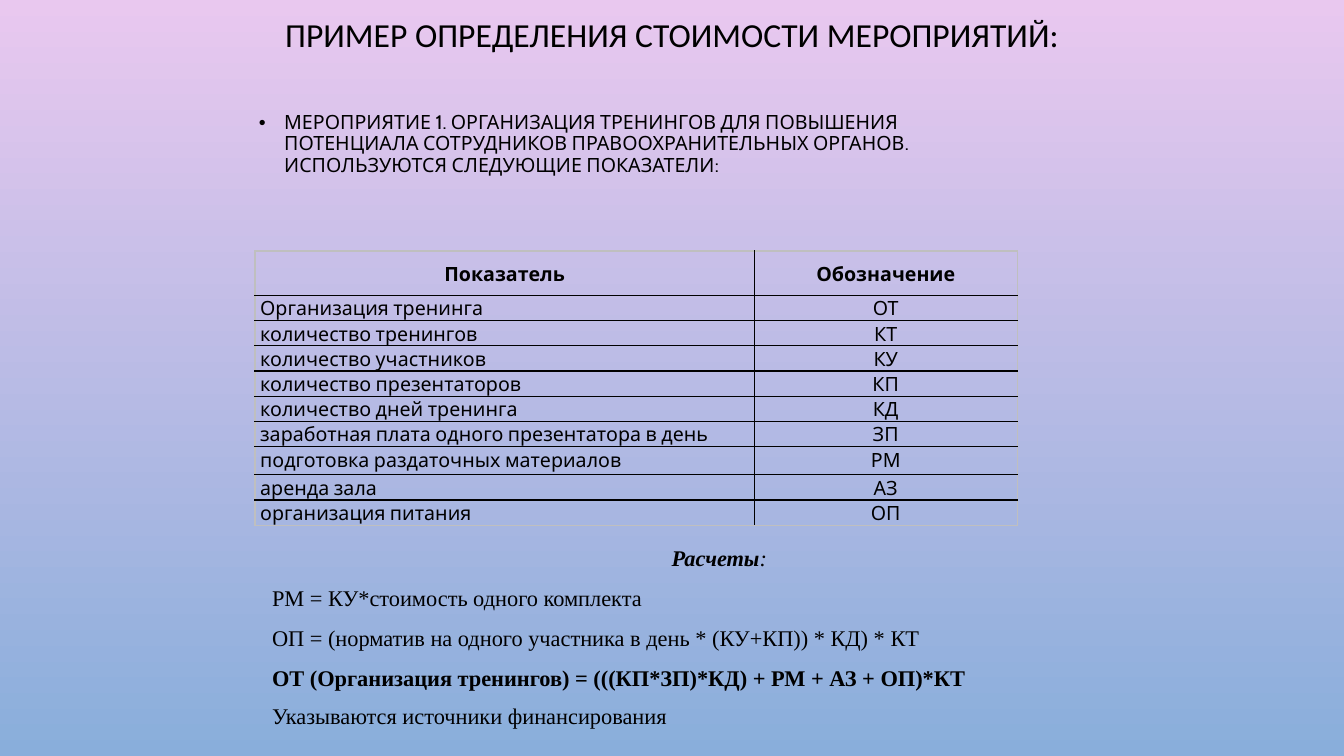
from dataclasses import dataclass
from typing import NamedTuple

from lxml.etree import SubElement as Sub
from pptx import Presentation as Deck
from pptx.dml.color import RGBColor as RGB
from pptx.enum.text import MSO_ANCHOR as Anchor, PP_ALIGN as Align
from pptx.oxml.ns import qn
from pptx.util import Inches, Pt


@dataclass(frozen=True)
class Theme:
    ink: str = "000000"
    edge: str = "BFBFBF"
    top: str = "E9C8EF"
    base: str = "89AEDB"
    head: str = "Calibri"
    body: str = "Cabin"
    calc: str = "Times New Roman"
    head_size: int = 24
    body_size: int = 14
    calc_size: int = 16


class Box(NamedTuple):
    left: float
    top: float
    width: float
    height: float


class Item(NamedTuple):
    name: str
    code: str
    height: float = 0.25


class Line(NamedTuple):
    text: str
    bold: bool = False
    align: Align = Align.JUSTIFY
    gap: float = 1.07


THEME = Theme()

ITEMS = [
    Item("Показатель", "Обозначение", 0.44),
    Item("Организация тренинга", "ОТ"),
    Item("количество тренингов", "КТ"),
    Item("количество участников", "КУ"),
    Item("количество презентаторов", "КП"),
    Item("количество дней тренинга", "КД"),
    Item("заработная плата одного презентатора в день", "ЗП"),
    Item("подготовка раздаточных материалов", "РМ", 0.28),
    Item("аренда зала", "АЗ"),
    Item("организация питания", "ОП"),
]

LINES = [
    Line("РМ = КУ*стоимость одного комплекта"),
    Line("ОП = (норматив на одного участника в день * (КУ+КП)) * КД) * КТ"),
    Line("ОТ (Организация тренингов) = (((КП*ЗП)*КД) + РМ + АЗ + ОП)*КТ", True),
    Line("Указываются источники финансирования", align=Align.LEFT, gap=1.0),
]


def style(par, face: str, size: int, bold: bool = False) -> None:
    font = par.font
    font.name, font.size, font.bold = face, Pt(size), bold
    font.color.rgb = RGB.from_string(THEME.ink)


def space(par, align: Align, gap: float, after: float = 0) -> None:
    par.alignment, par.line_spacing, par.space_after = align, gap, Pt(after)


def add_box(slide, box: Box):
    frame = slide.shapes.add_textbox(*map(Inches, box)).text_frame
    frame.word_wrap = True
    return frame


def add_title(slide) -> None:
    frame = add_box(slide, Box(2.2, 0.25, 8.93, 0.6))
    frame.vertical_anchor = Anchor.MIDDLE
    frame.margin_top, frame.margin_bottom = 0, Inches(0.38)
    par = frame.paragraphs[0]
    par.text = "ПРИМЕР ОПРЕДЕЛЕНИЯ СТОИМОСТИ МЕРОПРИЯТИЙ:"
    space(par, Align.CENTER, 0.9)
    style(par, THEME.head, THEME.head_size)


def add_intro(slide) -> None:
    frame = add_box(slide, Box(2.47, 1.07, 7.88, 1.13))
    frame.margin_right = Inches(0.3)
    par = frame.paragraphs[0]
    par.text = ("МЕРОПРИЯТИЕ 1. ОРГАНИЗАЦИЯ ТРЕНИНГОВ ДЛЯ ПОВЫШЕНИЯ ПОТЕНЦИАЛА "
                "СОТРУДНИКОВ ПРАВООХРАНИТЕЛЬНЫХ ОРГАНОВ. "
                "ИСПОЛЬЗУЮТСЯ СЛЕДУЮЩИЕ ПОКАЗАТЕЛИ:")
    space(par, Align.LEFT, 0.9)
    props = par._p.get_or_add_pPr()
    props.set("marL", str(Inches(0.25)))
    props.set("indent", str(Inches(-0.25)))
    Sub(props, qn("a:buFont"), typeface="Arial")
    Sub(props, qn("a:buChar"), char="•")
    style(par, THEME.body, THEME.body_size)


def add_edge(cell, side: str, color: str) -> None:
    line = Sub(cell._tc.get_or_add_tcPr(), qn(f"a:{side}"), w=str(Pt(1)))
    fill = Sub(line, qn("a:solidFill"))
    Sub(fill, qn("a:srgbClr"), val=color)


def add_grid(slide) -> None:
    widths = (4.95, 2.61)
    box = Box(2.53, 2.49, sum(widths), sum(item.height for item in ITEMS))
    grid = slide.shapes.add_table(len(ITEMS), 2, *map(Inches, box)).table
    grid.first_row = grid.horz_banding = False
    for col, width in zip(grid.columns, widths):
        col.width = Inches(width)
    last = len(ITEMS) - 1
    for r, item in enumerate(ITEMS):
        grid.rows[r].height = Inches(item.height)
        for c, text in enumerate((item.name, item.code)):
            cell = grid.cell(r, c)
            cell.margin_left = cell.margin_right = Inches(0.05)
            cell.margin_top = cell.margin_bottom = 0
            cell.vertical_anchor = Anchor.TOP if r else Anchor.MIDDLE
            # Outer edges are pale, inner ones dark
            outer = {"lnL": c == 0, "lnR": c == 1, "lnT": r == 0, "lnB": r == last}
            for side, pale in outer.items():
                add_edge(cell, side, THEME.edge if pale else THEME.ink)
            cell.fill.background()
            par = cell.text_frame.paragraphs[0]
            par.text = text
            space(par, Align.JUSTIFY if r and c == 0 else Align.CENTER, 1.07, 8)
            style(par, THEME.body, THEME.body_size, r == 0)


def add_calc(slide) -> None:
    frame = add_box(slide, Box(2.6, 5.33, 9.07, 1.97))
    head = frame.paragraphs[0]
    space(head, Align.CENTER, 1.07, 8)
    style(head, THEME.calc, THEME.calc_size)
    head.font.italic = True
    for text, bold in (("Расчеты", True), (":", False)):
        run = head.add_run()
        run.text, run.font.bold = text, bold
    for line in LINES:
        par = frame.add_paragraph()
        par.text = line.text
        space(par, line.align, line.gap, 8)
        style(par, THEME.calc, THEME.calc_size, line.bold)


def main() -> None:
    deck = Deck()
    deck.slide_width, deck.slide_height = Inches(13.33), Inches(7.5)
    slide = deck.slides.add_slide(deck.slide_layouts[6])

    # Background runs from top to bottom
    fill = slide.background.fill
    fill.gradient()
    fill.gradient_angle = 270
    for stop, place, color in zip(fill.gradient_stops, (0, 1), (THEME.top, THEME.base)):
        stop.position, stop.color.rgb = place, RGB.from_string(color)

    # Content from top to bottom
    add_title(slide)
    add_intro(slide)
    add_grid(slide)
    add_calc(slide)
    deck.save("out.pptx")


if __name__ == "__main__":
    main()
